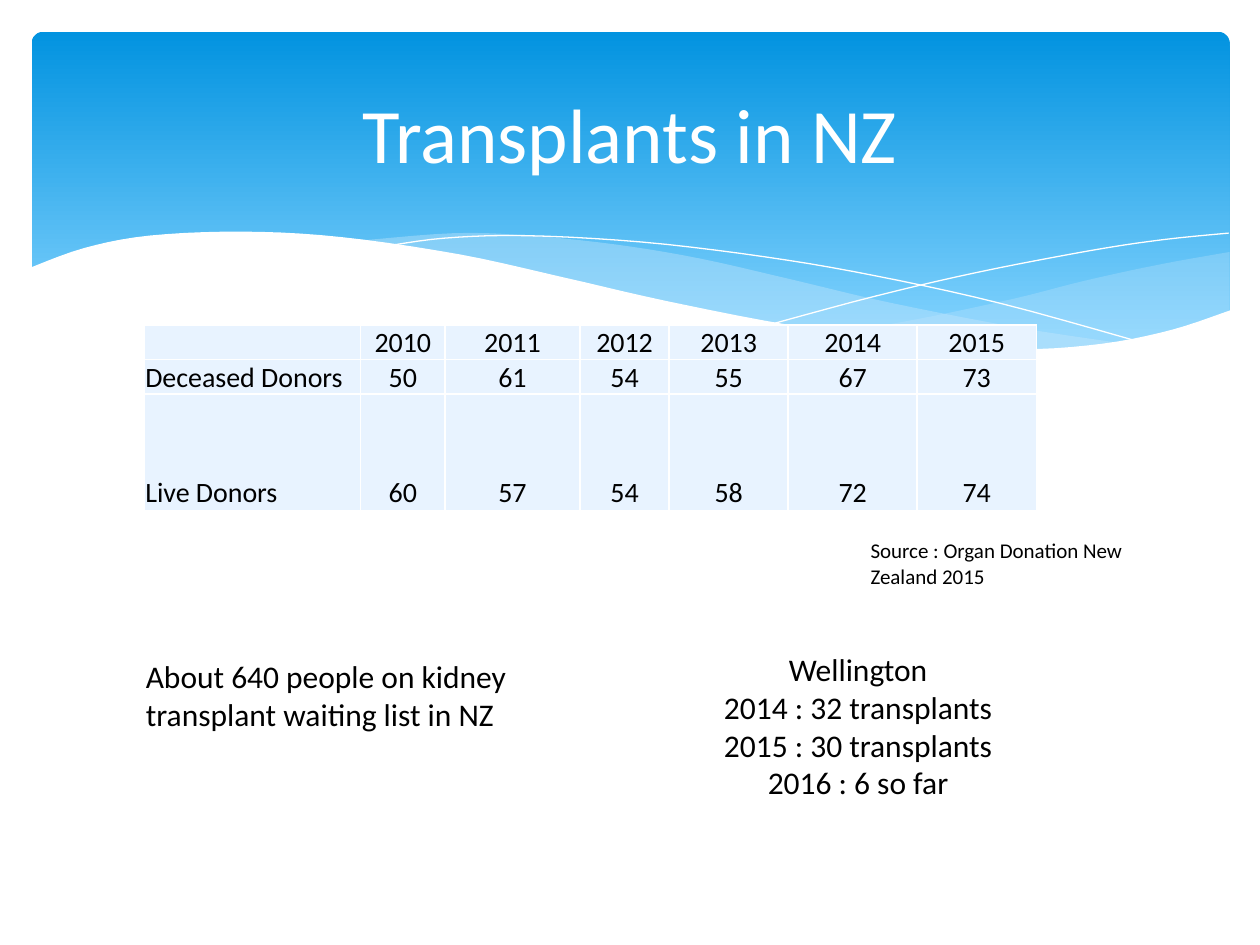
from lxml import etree
from pptx import Presentation
from pptx import util as u
from pptx.dml.color import RGBColor
from pptx.enum import shapes, text
from pptx.oxml.ns import qn

WHITE = RGBColor(0xFF, 0xFF, 0xFF)
BLACK = RGBColor(0x00, 0x00, 0x00)
SKY_TOP = RGBColor(0x02, 0x93, 0xE0)
SKY_BOTTOM = RGBColor(0x83, 0xD3, 0xFE)
MIST = RGBColor(0xC6, 0xE7, 0xFC)
CELL = RGBColor(0xE8, 0xF3, 0xFF)
LEFT, CENTER = text.PP_ALIGN.LEFT, text.PP_ALIGN.CENTER

# Wave outlines: key points in cm
RIGHT_TOP = [(24.79, 5.08), (23.39, 5.33), (21.87, 5.66), (20.45, 6.02),
             (18.52, 6.43), (16.79, 6.73)]
RIGHT_BOTTOM = [(16.79, 6.73), (18.26, 6.91), (19.53, 7.04), (20.68, 7.06),
                (21.92, 6.99), (23.19, 6.78), (24.1, 6.53), (24.79, 6.27)]
MIDDLE_TOP = [(22.68, 6.93), (20.5, 6.6), (17.93, 6.1), (15.98, 5.64), (14.1, 5.21),
              (12.42, 4.93), (10.67, 4.75), (9.17, 4.7), (7.26, 4.85)]
MIDDLE_BOTTOM = [(7.26, 4.85), (9.19, 5.16), (11.4, 5.64), (13.46, 6.1), (15.7, 6.55),
                 (17.65, 6.86), (19.33, 7.04), (20.78, 7.06), (22.68, 6.93)]
FALLING_LINE = [(7.85, 4.95), (8.97, 4.8), (10.57, 4.75), (12.95, 4.88),
                (15.44, 5.18), (17.65, 5.56), (20.19, 6.12), (23.04, 6.91)]
RISING_LINE = [(15.57, 6.53), (17.65, 5.97), (19.71, 5.49), (22, 5.05),
               (23.47, 4.83), (24.77, 4.7)]
FRONT_TOP = [(24.82, 6.25), (23.62, 6.65), (22.22, 6.93), (20.55, 7.04), (18.44, 6.91),
             (15.9, 6.55), (13.44, 6.07), (11.35, 5.59), (9.27, 5.13), (6.88, 4.78),
             (4.9, 4.67), (3.02, 4.75), (1.7, 5), (0.58, 5.41)]
FRONT_BASE = [(0.58, 8.36), (24.82, 8.36)]

DONORS = [["", "2010", "2011", "2012", "2013", "2014", "2015"],
          ["Deceased Donors", "50", "61", "54", "55", "67", "73"],
          ["Live Donors", "60", "57", "54", "58", "72", "74"]]
COL_WIDTHS = [4.36, 1.7, 2.72, 1.8, 2.4, 2.6, 2.4]
ROW_HEIGHTS = [0.64, 0.64, 2.34]


def smooth(points, steps=5):
    """Points on a Catmull-Rom curve through the key points."""
    padded = [points[0], *points, points[-1]]
    out = [points[0]]
    for a, b, c, d in zip(padded, padded[1:], padded[2:], padded[3:]):
        for i in range(1, steps + 1):
            t = i / steps
            out.append(tuple(
                (2 * q + (r - p) * t + (2 * p - 5 * q + 4 * r - s) * t ** 2
                 + (3 * q - p - 3 * r + s) * t ** 3) / 2
                for p, q, r, s in zip(a, b, c, d)))
    return out


class Deck:
    font = "Calibri"

    def __init__(self):
        self.prs = Presentation()
        self.prs.slide_width, self.prs.slide_height = u.Cm(25.4), u.Cm(19.05)
        self.s = self.prs.slides.add_slide(self.prs.slide_layouts[5])

    def format(self, tf, size, color=BLACK, align=LEFT):
        for p in tf.paragraphs:
            p.alignment = align
            for r in p.runs:
                r.font.name, r.font.size = self.font, u.Pt(size)
                r.font.color.rgb = color

    def banner(self, x, y, w, h):
        sp = self.s.shapes.add_shape(shapes.MSO_SHAPE.ROUNDED_RECTANGLE,
                                     u.Cm(x), u.Cm(y), u.Cm(w), u.Cm(h))
        sp.adjustments[0] = 0.034
        sp.shadow.inherit = False
        sp.line.fill.background()
        sp.fill.gradient()
        sp.fill.gradient_angle = 270
        top, bottom = sp.fill.gradient_stops
        top.color.rgb, top.position = SKY_TOP, 0
        bottom.color.rgb, bottom.position = SKY_BOTTOM, 0.9

    def freeform(self, points, closed):
        pts = [(u.Cm(x), u.Cm(y)) for x, y in points]
        fb = self.s.shapes.build_freeform(*pts[0])
        fb.add_line_segments(pts[1:], close=closed)
        sp = fb.convert_to_shape()
        sp.shadow.inherit = False
        return sp

    def wave(self, points, color, opacity=100):
        sp = self.freeform(points, True)
        sp.line.fill.background()
        sp.fill.solid()
        sp.fill.fore_color.rgb = color
        if opacity < 100:
            clr = sp.fill._xPr.find(".//" + qn("a:srgbClr"))
            etree.SubElement(clr, qn("a:alpha"), val=str(opacity * 1000))

    def hairline(self, points):
        sp = self.freeform(smooth(points), False)
        sp.fill.background()
        sp.line.color.rgb = WHITE
        sp.line.width = u.Pt(0)

    def title(self, words, x, y, w, h):
        sp = self.s.shapes.title
        sp.left, sp.top, sp.width, sp.height = u.Cm(x), u.Cm(y), u.Cm(w), u.Cm(h)
        tf = sp.text_frame
        tf.text = words
        tf.vertical_anchor = text.MSO_ANCHOR.MIDDLE
        self.format(tf, 44, WHITE, CENTER)
        self.s.shapes._spTree.append(sp._element)  # bring in front of the waves

    def textbox(self, words, x, y, w, h, size, align=LEFT):
        tf = self.s.shapes.add_textbox(u.Cm(x), u.Cm(y), u.Cm(w), u.Cm(h)).text_frame
        tf.word_wrap = True
        tf.auto_size = text.MSO_AUTO_SIZE.SHAPE_TO_FIT_TEXT
        tf.text = words
        self.format(tf, size, align=align)

    def borders(self, cell):
        tcPr = cell._tc.get_or_add_tcPr()
        for i, side in enumerate(("a:lnL", "a:lnR", "a:lnT", "a:lnB")):
            ln = etree.Element(qn(side), w=str(u.Pt(1)))
            fill = etree.SubElement(ln, qn("a:solidFill"))
            etree.SubElement(fill, qn("a:srgbClr"), val=str(WHITE))
            tcPr.insert(i, ln)

    def table(self, rows, x, y, widths, heights, size):
        tbl = self.s.shapes.add_table(len(rows), len(widths), u.Cm(x), u.Cm(y),
                                      u.Cm(sum(widths)), u.Cm(sum(heights))).table
        tbl.first_row = tbl.horz_banding = False
        for col, w in zip(tbl.columns, widths):
            col.width = u.Cm(w)
        for row, h, values in zip(tbl.rows, heights, rows):
            row.height = u.Cm(h)
            for i, (cell, value) in enumerate(zip(row.cells, values)):
                cell.margin_left = cell.margin_right = cell.margin_top = u.Cm(0.02)
                cell.margin_bottom = 0
                cell.vertical_anchor = text.MSO_ANCHOR.BOTTOM
                cell.fill.solid()
                cell.fill.fore_color.rgb = CELL
                self.borders(cell)
                tf = cell.text_frame
                if value:
                    tf.text = value
                    self.format(tf, size, align=CENTER if i else LEFT)
                else:  # keeps the empty cell from stretching its row
                    etree.SubElement(tf.paragraphs[0]._p, qn("a:endParaRPr"),
                                     sz=str(size * 100))


def main():
    deck = Deck()

    # Banner with waves
    deck.banner(0.64, 0.64, 24.15, 6.86)
    deck.wave(smooth(RIGHT_TOP) + smooth(RIGHT_BOTTOM), MIST, 29)
    deck.wave(smooth(MIDDLE_TOP) + smooth(MIDDLE_BOTTOM), MIST, 40)
    deck.hairline(FALLING_LINE)
    deck.hairline(RISING_LINE)
    deck.wave(smooth(FRONT_TOP) + FRONT_BASE, WHITE)

    # Title, source and donor table
    deck.title("Transplants in NZ", 1.27, 0.94, 22.86, 3.48)
    deck.textbox("Source : Organ Donation New Zealand 2015", 17.3, 10.72, 6.8, 1.28, 12)
    deck.table(DONORS, 2.91, 6.55, COL_WIDTHS, ROW_HEIGHTS, 16)

    # Notes below the table
    deck.textbox("Wellington\n2014 : 32 transplants\n2015 : 30 transplants\n2016 : 6 so far",
                 10.95, 12.98, 12.7, 3.33, 18, CENTER)
    deck.textbox("About 640 people on kidney transplant waiting list in NZ",
                 2.69, 13.13, 9.6, 1.8, 18)

    deck.prs.save("out.pptx")


if __name__ == "__main__":
    main()
